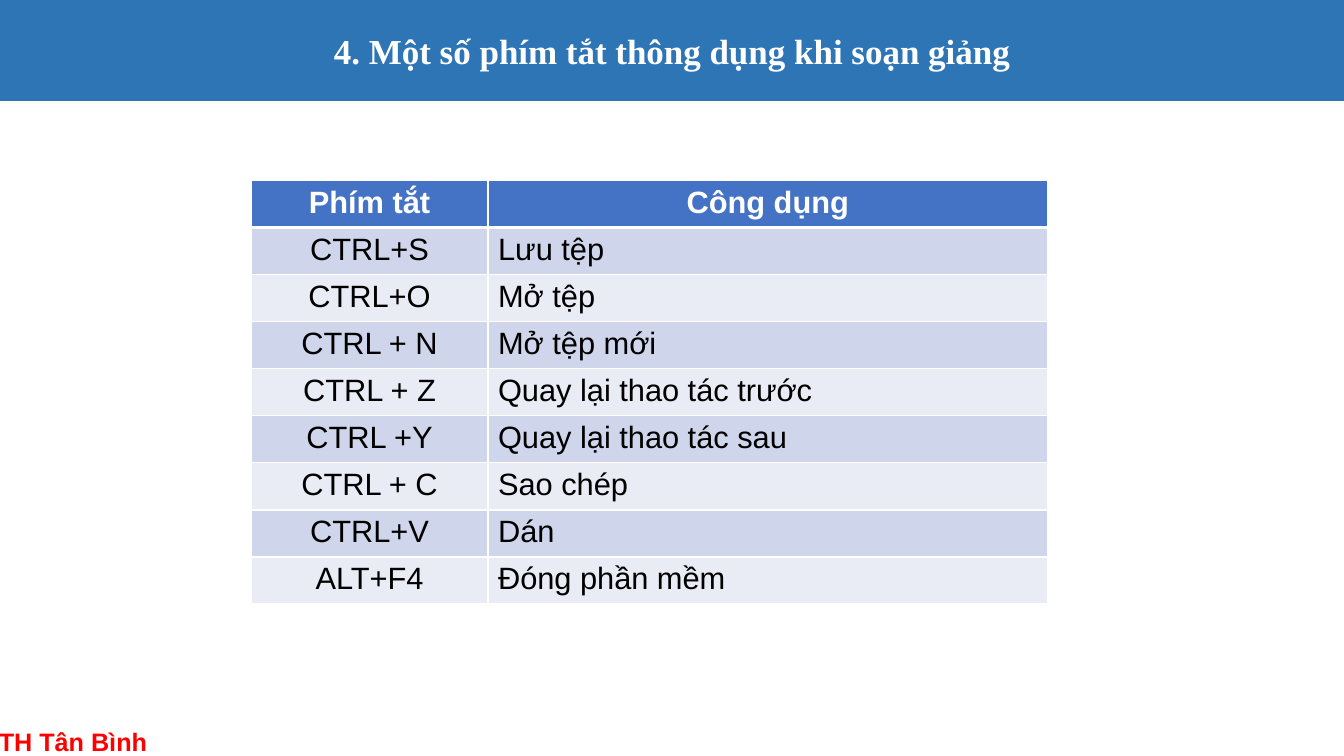
from dataclasses import dataclass

from lxml.etree import SubElement
from pptx import Presentation
from pptx.dml.color import RGBColor
from pptx.enum.shapes import MSO_SHAPE as Shape
from pptx.enum.text import MSO_ANCHOR as Anchor, MSO_AUTO_SIZE as AutoSize, PP_ALIGN as Align
from pptx.oxml.ns import qn
from pptx.util import Inches, Pt

WHITE, BLACK, RED = "FFFFFF", "000000", "FF0000"
BANNER_BLUE, HEADER_BLUE = "2E75B6", "4472C4"
BANDS = ("CFD5EA", "E9EBF5")

prs = Presentation()
prs.slide_width, prs.slide_height = Inches(13.33), Inches(7.5)


@dataclass(frozen=True)
class Style:
    size: float
    color: str
    bold: bool = False
    align: Align = Align.LEFT
    font: str = "Arial"


@dataclass(frozen=True)
class Shortcut:
    keys: str
    purpose: str


HEADER = Shortcut("Phím tắt", "Công dụng")
SHORTCUTS = [
    Shortcut("CTRL+S", "Lưu tệp"),
    Shortcut("CTRL+O", "Mở tệp"),
    Shortcut("CTRL + N", "Mở tệp mới"),
    Shortcut("CTRL + Z", "Quay lại thao tác trước"),
    Shortcut("CTRL +Y", "Quay lại thao tác sau"),
    Shortcut("CTRL + C", "Sao chép"),
    Shortcut("CTRL+V", "Dán"),
    Shortcut("ALT+F4", "Đóng phần mềm"),
]


def across(percent: float) -> int:
    """Share of the slide's width."""
    return round(prs.slide_width * percent / 100)


def down(percent: float) -> int:
    """Share of the slide's height."""
    return round(prs.slide_height * percent / 100)


def rgb(color: str) -> RGBColor:
    return RGBColor.from_string(color)


def write(tf, text: str, style: Style) -> None:
    tf.text = text
    p = tf.paragraphs[0]
    p.alignment = style.align
    font = p.runs[0].font
    font.name, font.size, font.bold = style.font, Pt(style.size), style.bold
    font.color.rgb = rgb(style.color)


def add_borders(cell, bottom: float) -> None:
    tc_pr = cell._tc.get_or_add_tcPr()
    for side, width in (("L", 1), ("R", 1), ("T", 1), ("B", bottom)):
        ln = SubElement(tc_pr, qn(f"a:ln{side}"), w=str(Pt(width)))
        fill = SubElement(ln, qn("a:solidFill"))
        SubElement(fill, qn("a:srgbClr"), val=WHITE)


def fill_cell(cell, text: str, style: Style, color: str, bottom: float = 1) -> None:
    write(cell.text_frame, text, style)
    add_borders(cell, bottom)
    cell.fill.solid()
    cell.fill.fore_color.rgb = rgb(color)


def add_banner(s, text: str) -> None:
    sp = s.shapes.add_shape(Shape.RECTANGLE, 0, 0, prs.slide_width, down(13.33))
    sp.shadow.inherit = False
    sp.fill.solid()
    sp.fill.fore_color.rgb = rgb(BANNER_BLUE)
    sp.line.color.rgb = rgb(BANNER_BLUE)
    sp.line.width = Pt(1)
    sp.text_frame.vertical_anchor = Anchor.MIDDLE
    write(sp.text_frame, text, Style(25, WHITE, True, Align.CENTER, "Times New Roman"))


def add_school(s, text: str) -> None:
    sp = s.shapes.add_textbox(across(-0.83), down(95.47), across(12.68), down(5.33))
    tf = sp.text_frame
    tf.word_wrap = False
    tf.auto_size = AutoSize.SHAPE_TO_FIT_TEXT
    write(tf, text, Style(18, RED, True))


def add_shortcuts(s, shortcuts: list[Shortcut]) -> None:
    widths = (across(17.63), across(41.64))
    row_height, count = down(6.22), len(shortcuts) + 1
    table = s.shapes.add_table(count, 2, across(18.68), down(23.87),
                               sum(widths), row_height * count).table
    for column, width in zip(table.columns, widths):
        column.width = width
    for row in table.rows:
        row.height = row_height

    # Header row with a thick rule below
    head = Style(22, WHITE, True, Align.CENTER)
    for i, text in enumerate((HEADER.keys, HEADER.purpose)):
        fill_cell(table.cell(0, i), text, head, HEADER_BLUE, bottom=3)

    # Banded rows
    for i, shortcut in enumerate(shortcuts):
        band = BANDS[i % 2]
        fill_cell(table.cell(i + 1, 0), shortcut.keys,
                  Style(22, BLACK, align=Align.CENTER), band)
        fill_cell(table.cell(i + 1, 1), shortcut.purpose, Style(22, BLACK), band)


def main() -> None:
    s = prs.slides.add_slide(prs.slide_layouts[6])
    add_banner(s, "4. Một số phím tắt thông dụng khi soạn giảng")
    add_school(s, "TH Tân Bình")
    add_shortcuts(s, SHORTCUTS)
    prs.save("out.pptx")


if __name__ == "__main__":
    main()
